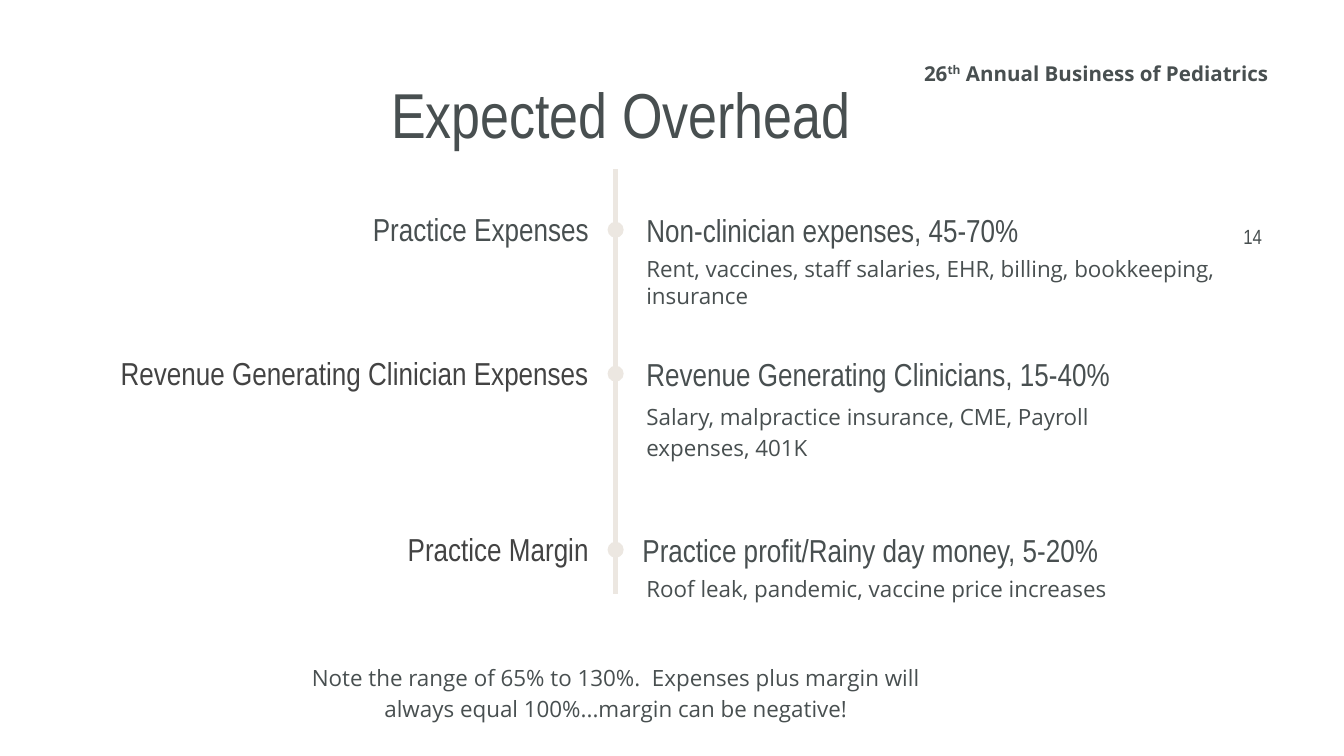
"""Build the Expected Overhead timeline slide."""
from pptx import Presentation
from pptx.dml.color import RGBColor
from pptx.enum.shapes import MSO_CONNECTOR, MSO_SHAPE
from pptx.enum.text import MSO_ANCHOR, MSO_AUTO_SIZE, PP_ALIGN
from pptx.oxml.ns import qn
from pptx.util import Pt

TITLE = "Expected Overhead"
EVENT = [("26", False), ("th", True), (" Annual Business of Pediatrics", False)]
PAGE = "14"
NOTE = ("Note the range of 65% to 130%.  Expenses plus margin will "
        "always equal 100%...margin can be negative!")
SLATE, GREY, SAND = "484F50", "434343", "ECE7E1"
HEAD_FONT, BODY_FONT = "Arial Narrow", "Open Sans"
AXIS_X, AXIS_TOP, AXIS_BOTTOM, DOT = 329.8, 90.7, 318.2, 8.6

ROWS = [
    dict(center=123.1, label="Practice Expenses", label_color=SLATE,
         heading="Non-clinician expenses, 45-70%", heading_left=343.4,
         detail="Rent, vaccines, staff salaries, EHR, billing, bookkeeping, insurance",
         detail_box=(135.4, 311.8, 48.2), spacing=1.0),
    dict(center=200.2, label="Revenue Generating Clinician Expenses", label_color=GREY,
         heading="Revenue Generating Clinicians, 15-40%", heading_left=343.4,
         detail="Salary, malpractice insurance, CME, Payroll expenses, 401K",
         detail_box=(212.4, 294.5, 36), spacing=1.15),
    dict(center=294.5, label="Practice Margin", label_color=GREY,
         heading="Practice profit/Rainy day money, 5-20%", heading_left=341.3,
         detail="Roof leak, pandemic, vaccine price increases",
         detail_box=(304.6, 357.8, 19.4), spacing=1.15),
]


def rgb(color):
    """Turn a hex string into a colour."""
    return RGBColor.from_string(color)


def format_text(shape, runs, size, font, color=SLATE, align=PP_ALIGN.LEFT,
                anchor=MSO_ANCHOR.TOP, spacing=1.0, bold=False, insets=(2.9, 1.4)):
    """Fill a shape with one paragraph of (text, raised) runs."""
    frame = shape.text_frame
    frame.word_wrap = True
    frame.auto_size = MSO_AUTO_SIZE.NONE
    frame.vertical_anchor = anchor
    frame.margin_left = frame.margin_right = Pt(insets[0])
    frame.margin_top = frame.margin_bottom = Pt(insets[1])
    paragraph = frame.paragraphs[0]
    paragraph.alignment = align
    paragraph.line_spacing = spacing
    paragraph.space_before = Pt(0)
    paragraph.font.name = font
    paragraph.font.size = Pt(size)
    paragraph.font.bold = bold
    paragraph.font.color.rgb = rgb(color)
    for text, raised in runs:
        run = paragraph.add_run()
        run.text = text
        if raised:
            run.font._element.set("baseline", "33000")


def add_text(slide, box, text, size, font, **style):
    """Add a text box holding a single plain run."""
    shape = slide.shapes.add_textbox(*map(Pt, box))
    format_text(shape, [(text, False)], size, font, **style)


def add_axis(slide):
    """Draw the vertical timeline."""
    axis = slide.shapes.add_connector(MSO_CONNECTOR.STRAIGHT, Pt(AXIS_X), Pt(AXIS_TOP),
                                      Pt(AXIS_X), Pt(AXIS_BOTTOM))
    axis.line.color.rgb = rgb(SAND)
    axis.line.width = Pt(3)
    properties = axis._element.spPr
    properties.append(properties.makeelement(qn("a:effectLst"), {}))


def add_row(slide, row):
    """Add the dot, label, heading and detail of one timeline row."""
    center = row["center"]
    dot = slide.shapes.add_shape(MSO_SHAPE.OVAL, Pt(AXIS_X - DOT / 2), Pt(center - DOT / 2),
                                 Pt(DOT), Pt(DOT))
    dot.shadow.inherit = False
    dot.fill.solid()
    dot.fill.fore_color.rgb = rgb(SAND)
    dot.line.fill.background()
    add_text(slide, (32.4, center - 18, 290.2, 34.6), row["label"], 17, HEAD_FONT,
             color=row["label_color"], align=PP_ALIGN.RIGHT, insets=(7.2, 7.2))
    add_text(slide, (row["heading_left"], center - 11.5, 362, 23), row["heading"], 17,
             HEAD_FONT, anchor=MSO_ANCHOR.MIDDLE)
    top, width, height = row["detail_box"]
    add_text(slide, (343.4, top, width, height), row["detail"], 12, BODY_FONT,
             spacing=row["spacing"])


def main():
    """Build and save the slide."""
    presentation = Presentation()
    presentation.slide_width, presentation.slide_height = Pt(720), Pt(405)
    slide = presentation.slides.add_slide(presentation.slide_layouts[5])
    title = slide.shapes.title
    title.left, title.top, title.width, title.height = map(Pt, (166.3, 38.9, 332.6, 43.2))
    format_text(title, [(TITLE, False)], 34, HEAD_FONT, align=PP_ALIGN.CENTER)

    add_axis(slide)
    for row in ROWS:
        add_row(slide, row)
    add_text(slide, (151.2, 352.1, 357.8, 36), NOTE, 12, BODY_FONT,
             align=PP_ALIGN.CENTER, spacing=1.15)
    add_text(slide, (651.6, 118.8, 27.4, 18.7), PAGE, 11, HEAD_FONT, align=PP_ALIGN.RIGHT)
    event = slide.shapes.add_textbox(*map(Pt, (486, 31, 196.6, 15.8)))
    format_text(event, EVENT, 11, BODY_FONT, align=PP_ALIGN.RIGHT, bold=True)
    presentation.save("out.pptx")


if __name__ == "__main__":
    main()
